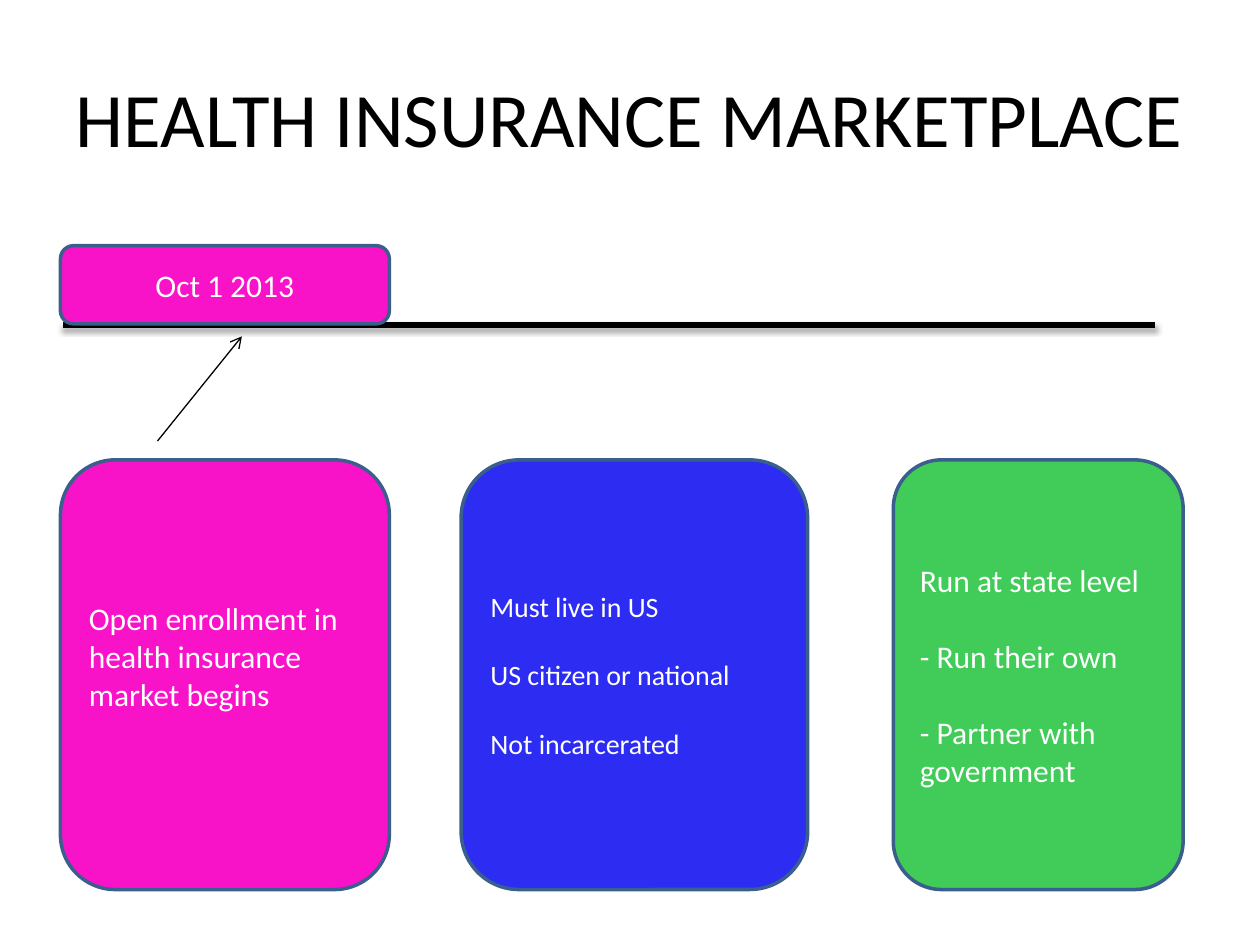
import pptx
import pptx.util
import pptx.dml.color
import pptx.enum.shapes
import pptx.enum.text
import pptx.oxml
import pptx.oxml.ns

presentation = pptx.Presentation()
presentation.slide_width = pptx.util.Inches(10)
presentation.slide_height = pptx.util.Inches(7.5)
slide = presentation.slides.add_slide(presentation.slide_layouts[6])

# Grid of 100 columns by 75 rows
column = presentation.slide_width / 100
row = presentation.slide_height / 75

PINK, BLUE, GREEN = "F913C8", "2C2CF2", "41CB58"
BLACK, WHITE, OUTLINE = "000000", "FFFFFF", "3A5F8C"
LINE_HEIGHT = 1.22  # Calibri line height as a share of its size


def color(value):
    return pptx.dml.color.RGBColor.from_string(value)


def write(shape, lines, size, text_color, alignment):
    """Fill a shape with centred-in-height lines, one blank line's gap apart."""
    frame = shape.text_frame
    frame.word_wrap = True
    frame.vertical_anchor = pptx.enum.text.MSO_ANCHOR.MIDDLE
    frame.text = "\n".join(lines)
    for index, paragraph in enumerate(frame.paragraphs):
        paragraph.alignment = alignment
        paragraph.font.name = "Calibri"
        paragraph.font.size = pptx.util.Pt(size)
        paragraph.font.color.rgb = color(text_color)
        if index:
            paragraph.space_before = pptx.util.Pt(round(size * LINE_HEIGHT))


left_aligned = pptx.enum.text.PP_ALIGN.LEFT
centered = pptx.enum.text.PP_ALIGN.CENTER

# Title
title = slide.shapes.add_textbox(
    int(5 * column), int(3 * row), int(90 * column), int(12.5 * row))
write(title, ["HEALTH INSURANCE MARKETPLACE"], 44, BLACK, centered)

# Timeline with a soft shadow, and the arrow pointing up to it
shadow = (
    '<a:outerShdw blurRad="39370" dist="22860" dir="5400000" rotWithShape="0">'
    '<a:srgbClr val="000000"><a:alpha val="35000"/></a:srgbClr></a:outerShdw>')
arrowhead = '<a:tailEnd %s type="arrow"/>' % pptx.oxml.ns.nsdecls("a")
for start_x, start_y, end_x, end_y, weight, effect, has_head in [
    (5, 25.8, 91.7, 25.8, 3, shadow, False),
    (12.5, 35, 19.2, 26.7, 0.75, "", True),
]:
    connector = slide.shapes.add_connector(
        pptx.enum.shapes.MSO_CONNECTOR.STRAIGHT,
        int(start_x * column), int(start_y * row),
        int(end_x * column), int(end_y * row))
    connector.line.color.rgb = color(BLACK)
    connector.line.width = pptx.util.Pt(weight)
    if has_head:
        connector.line._get_or_add_ln().append(pptx.oxml.parse_xml(arrowhead))
    connector._element.spPr.append(pptx.oxml.parse_xml(
        "<a:effectLst %s>%s</a:effectLst>" % (pptx.oxml.ns.nsdecls("a"), effect)))

# Date label and the three cards
card_top, card_height = 36.5, 34.1
boxes = [
    (70.9, card_top, 23, card_height, GREEN, 18, left_aligned,
     ["Run at state level", "- Run their own", "- Partner with government"]),
    (4.8, card_top, 26.1, card_height, PINK, 18, left_aligned,
     ["Open enrollment in health insurance market begins"]),
    (4.8, 19.5, 26.1, 6.2, PINK, 18, centered, ["Oct 1 2013"]),
    (36.6, card_top, 27.5, card_height, BLUE, 16, left_aligned,
     ["Must live in US", "US citizen or national", "Not incarcerated"]),
]
for left, top, width, height, fill, size, alignment, lines in boxes:
    box = slide.shapes.add_shape(
        pptx.enum.shapes.MSO_SHAPE.ROUNDED_RECTANGLE,
        int(left * column), int(top * row), int(width * column), int(height * row))
    box.shadow.inherit = False
    box.fill.solid()
    box.fill.fore_color.rgb = color(fill)
    box.line.color.rgb = color(OUTLINE)
    box.line.width = pptx.util.Pt(2)
    write(box, lines, size, WHITE, alignment)
    if fill == PINK and top == card_top:
        # The enrollment text sits half a line above the middle
        box.text_frame.margin_bottom = pptx.util.Inches(0.35)

presentation.save("out.pptx")
